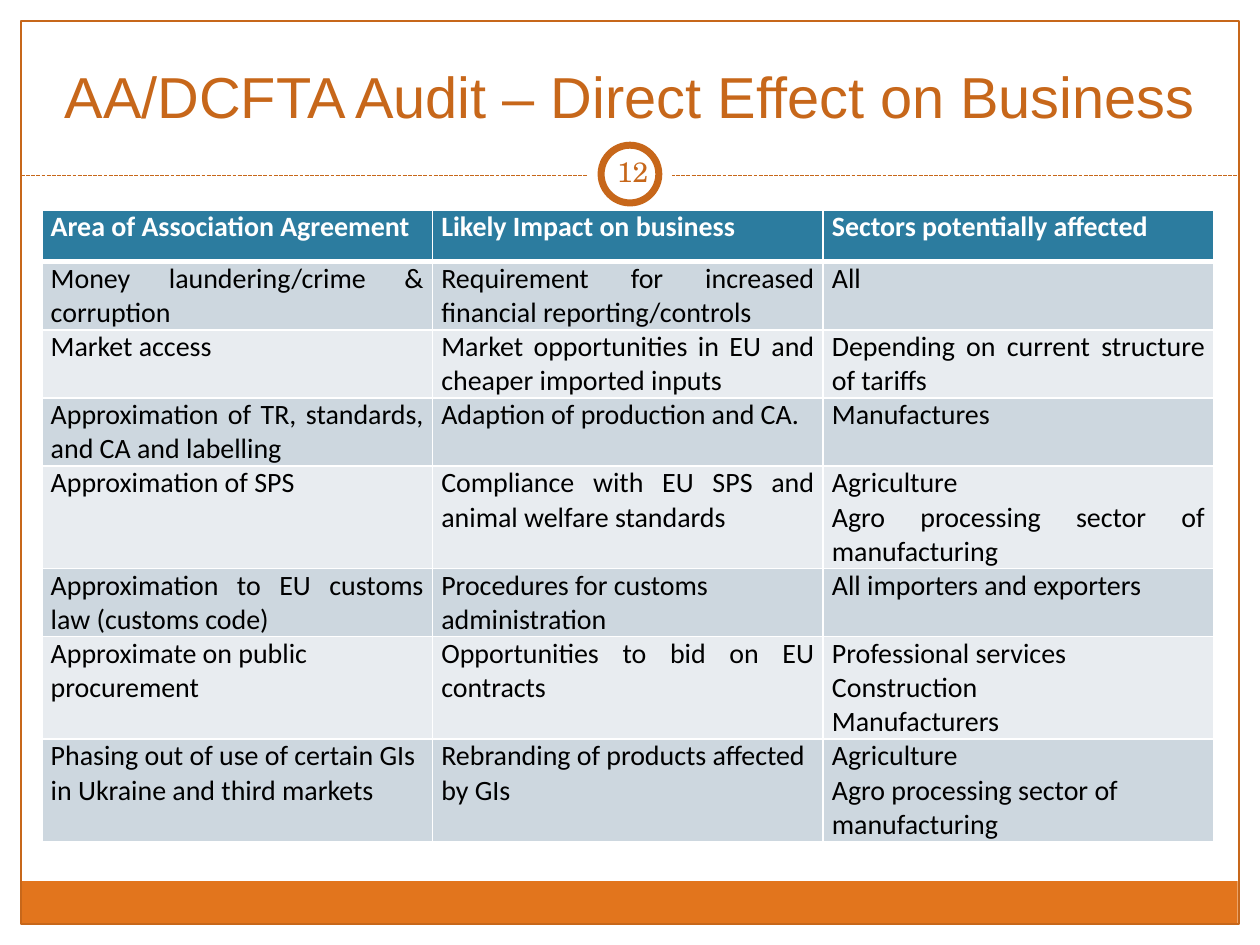
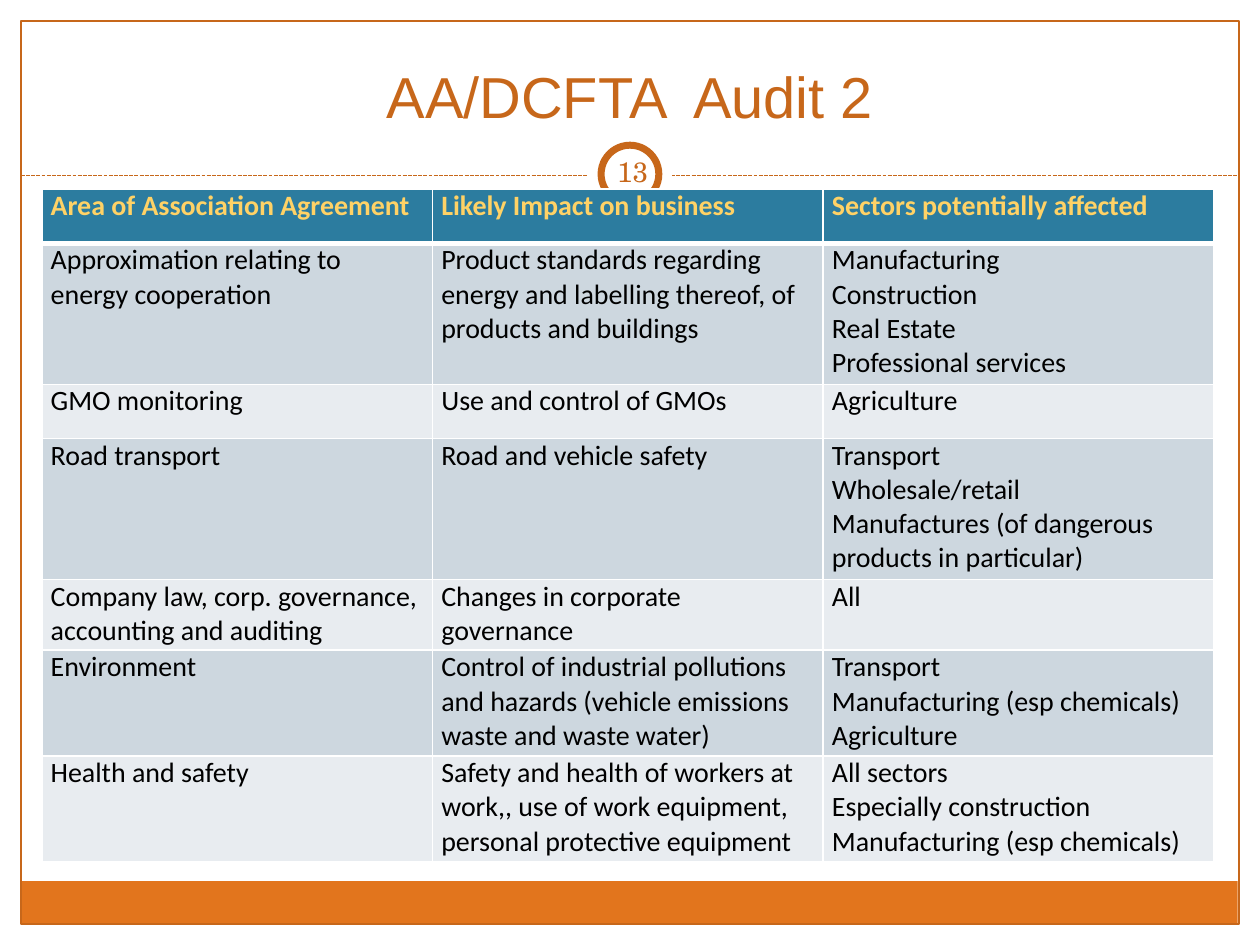
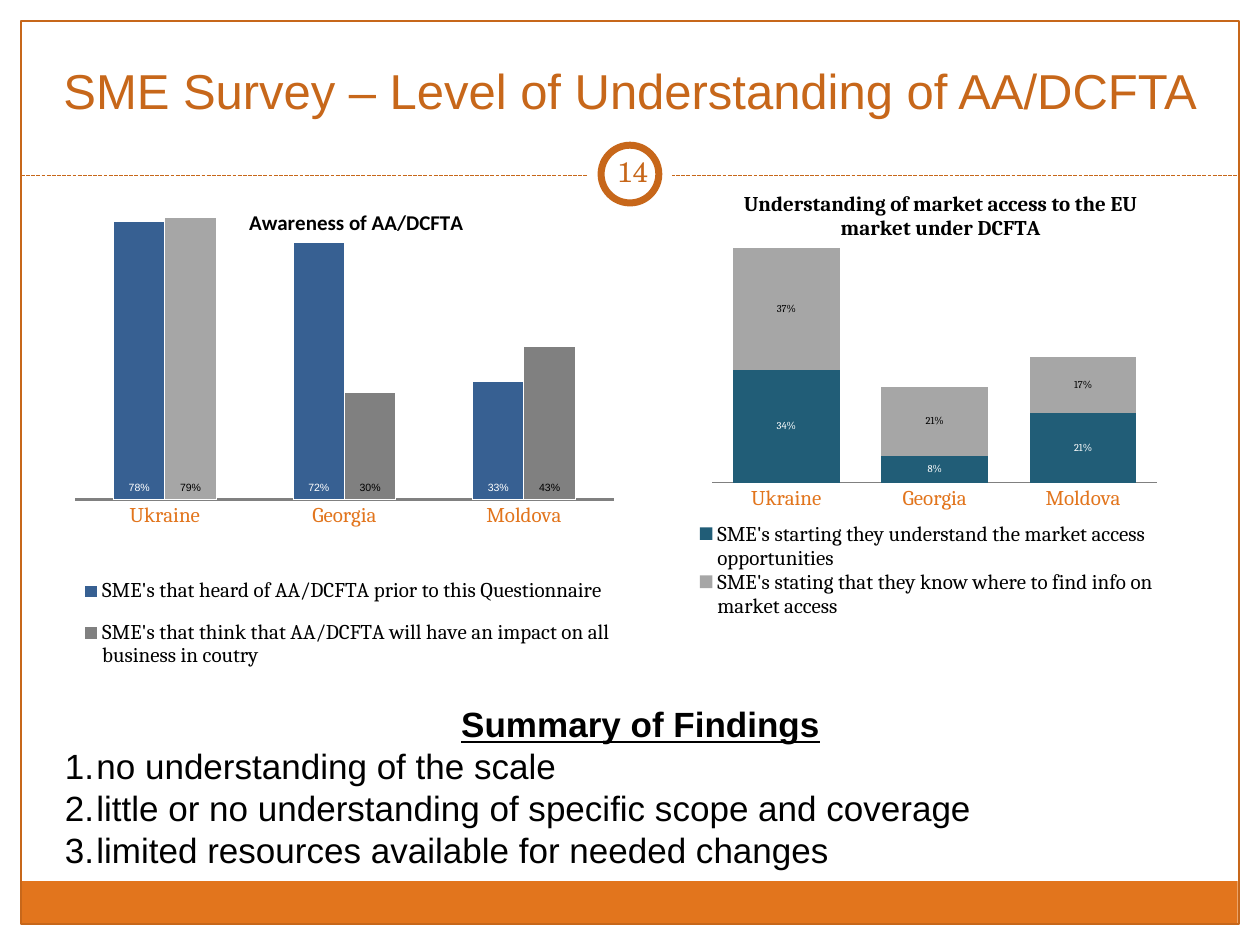
import pptx
import pptx.chart.data
import pptx.dml.color
import pptx.enum.chart
import pptx.enum.dml
import pptx.enum.shapes
import pptx.enum.text
import pptx.oxml.ns
import pptx.util
from lxml import etree

Pt = pptx.util.Pt
RGBColor = pptx.dml.color.RGBColor
SHAPE = pptx.enum.shapes.MSO_SHAPE
ALIGN = pptx.enum.text.PP_ALIGN
ANCHOR = pptx.enum.text.MSO_ANCHOR
CHART = pptx.enum.chart.XL_CHART_TYPE
qn = pptx.oxml.ns.qn

WHITE = RGBColor(0xFF, 0xFF, 0xFF)
BLACK = RGBColor(0, 0, 0)
ORANGE = RGBColor(0xE2, 0x75, 0x1D)
RUST = RGBColor(0xC7, 0x67, 0x1A)
TEAL = RGBColor(0x2C, 0x7C, 0x9F)
YELLOW = RGBColor(0xFF, 0xD2, 0x66)
BAND_DARK = RGBColor(0xCD, 0xD7, 0xDF)
BAND_LIGHT = RGBColor(0xE8, 0xEC, 0xF0)
BAR_BLUE = RGBColor(0x37, 0x60, 0x92)
BAR_TEAL = RGBColor(0x21, 0x5D, 0x77)
BAR_GREY = RGBColor(0x80, 0x80, 0x80)
BAR_SILVER = RGBColor(0xA6, 0xA6, 0xA6)

COUNTRIES = ["Ukraine", "Georgia", "Moldova"]
HEADINGS = ("Area of Association Agreement", "Likely Impact on business",
            "Sectors potentially affected")
EFFECT_ROWS = [
    (2, "Money laundering/crime & corruption",
     "Requirement for increased financial reporting/controls", "All"),
    (2, "Market access", "Market opportunities in EU and cheaper imported inputs",
     "Depending on current structure of tariffs"),
    (2, "Approximation of TR, standards, and CA and labelling",
     "Adaption of production and CA.", "Manufactures"),
    (3, "Approximation of SPS", "Compliance with EU SPS and animal welfare standards",
     "Agriculture\nAgro processing sector of manufacturing"),
    (2, "Approximation to EU customs law (customs code)",
     "Procedures for customs administration", "All importers and exporters"),
    (3, "Approximate on public procurement", "Opportunities to bid on EU contracts",
     "Professional services\nConstruction\nManufacturers"),
    (3, "Phasing out of use of certain GIs in Ukraine and third markets",
     "Rebranding of products affected by GIs",
     "Agriculture\nAgro processing sector of manufacturing"),
]
EFFECT_LEFT_ALIGNED = {(5, 1), (6, 0), (7, 0), (7, 1), (7, 2)}
AUDIT_ROWS = [
    (4, "Approximation relating to energy cooperation",
     "Product standards regarding energy and labelling thereof, of products and buildings",
     "Manufacturing\nConstruction\nReal Estate\nProfessional services"),
    (1, "GMO monitoring", "Use and control of GMOs", "Agriculture"),
    (4, "Road transport", "Road and vehicle safety",
     "Transport\nWholesale/retail\nManufactures (of dangerous products in particular)"),
    (2, "Company law, corp. governance, accounting and auditing",
     "Changes in corporate governance", "All"),
    (3, "Environment",
     "Control of industrial pollutions and hazards (vehicle emissions waste and waste water)",
     "Transport\nManufacturing (esp chemicals)\nAgriculture"),
    (3, "Health and safety",
     "Safety and health of workers at work,, use of work equipment, "
     "personal protective equipment",
     "All sectors\nEspecially construction\nManufacturing (esp chemicals)"),
]
AUDIT_LEFT_ALIGNED = {(row, column) for row in range(1, 7) for column in range(3)}
FINDINGS = ["no understanding of the scale",
            "little or no understanding of specific scope and coverage",
            "limited resources available for needed changes"]


def set_font(font, name, size, color, bold=False):
    font.name, font.size, font.bold = name, Pt(size), bold
    font.color.rgb = color


def add_shape(page, kind, left, top, width, height, fill=None, line_width=None):
    shape = page.shapes.add_shape(kind, Pt(left), Pt(top), Pt(width), Pt(height))
    shape.shadow.inherit = False
    if fill is None:
        shape.fill.background()
    else:
        shape.fill.solid()
        shape.fill.fore_color.rgb = fill
    if line_width is None:
        shape.line.fill.background()
    else:
        shape.line.color.rgb = RUST
        shape.line.width = Pt(line_width)


def add_text(page, text, left, top, width, height, font, size, color,
             anchor=ANCHOR.TOP, margin=None):
    box = page.shapes.add_textbox(Pt(left), Pt(top), Pt(width), Pt(height))
    frame = box.text_frame
    frame.word_wrap = True
    frame.vertical_anchor = anchor
    if margin is not None:
        frame.margin_left = frame.margin_right = Pt(margin)
    frame.text = text
    for para in frame.paragraphs:
        para.alignment = ALIGN.CENTER
        set_font(para.font, font, size, color)
    return frame


def add_divider(page):
    line = page.shapes.add_connector(
        pptx.enum.shapes.MSO_CONNECTOR.STRAIGHT, Pt(12), Pt(100.5), Pt(708), Pt(100.5))
    line.line.color.rgb = RUST
    line.line.width = Pt(0.75)
    line.line.dash_style = pptx.enum.dml.MSO_LINE.SQUARE_DOT
    etree.SubElement(line._element.spPr, qn("a:effectLst"))


def add_page(deck, title, title_size=33, title_top=18, title_height=60):
    page = deck.slides.add_slide(deck.slide_layouts[6])
    add_shape(page, SHAPE.RECTANGLE, 11.75, 503.5, 695.5, 24.5, fill=ORANGE)
    add_shape(page, SHAPE.RECTANGLE, 12, 12, 696, 516, line_width=0.75)
    add_divider(page)
    add_shape(page, SHAPE.OVAL, 336, 75.5, 48, 48, fill=WHITE)
    add_shape(page, SHAPE.OVAL, 343.5, 83, 33, 33, fill=WHITE, line_width=4)
    add_text(page, title, 24, title_top, 672, title_height, "Arial", title_size, RUST,
             anchor=ANCHOR.BOTTOM)
    return page


def add_number(page, number):
    add_text(page, str(number), 343.5, 80.5, 36, 34.5, "TeX Gyre Schola", 16, RUST,
             anchor=ANCHOR.MIDDLE, margin=3.6)


def add_borders(cell, top, bottom):
    properties = cell._tc.get_or_add_tcPr()
    for side, width in (("L", 1), ("R", 1), ("T", top), ("B", bottom)):
        line = etree.SubElement(properties, qn("a:ln" + side), w=str(Pt(width)))
        fill = etree.SubElement(line, qn("a:solidFill"))
        etree.SubElement(fill, qn("a:srgbClr"), val=str(WHITE))


def fill_cell(cell, text, row, heading_color, alignment):
    add_borders(cell, 3 if row == 1 else 1, 3 if row == 0 else 1)
    cell.fill.solid()
    cell.fill.fore_color.rgb = (
        TEAL if row == 0 else BAND_DARK if row % 2 else BAND_LIGHT)
    cell.margin_left = cell.margin_right = Pt(5)
    cell.margin_top = cell.margin_bottom = 0
    cell.text_frame.text = text
    for para in cell.text_frame.paragraphs:
        para.alignment = alignment
        set_font(para.font, "Calibri", 16, BLACK if row else heading_color, row == 0)


def add_impact_table(page, top, body_rows, heading_height, line_height,
                     heading_color, left_aligned):
    rows = [(1, *HEADINGS)] + body_rows
    heights = [max(heading_height, row[0] * line_height) for row in rows]
    table = page.shapes.add_table(len(rows), 3, Pt(24), Pt(top), Pt(669.6),
                                  Pt(sum(heights))).table
    for column in table.columns:
        column.width = Pt(223.2)
    for row, (_, *texts) in enumerate(rows):
        table.rows[row].height = Pt(heights[row])
        for column, text in enumerate(texts):
            alignment = ALIGN.LEFT if (row, column) in left_aligned else ALIGN.JUSTIFY
            fill_cell(table.cell(row, column), text, row, heading_color, alignment)


def place(element, x, y, width=None, height=None, inner=False):
    for old in element.findall(qn("c:layout")):
        element.remove(old)
    layout = etree.Element(qn("c:layout"))
    manual = etree.SubElement(layout, qn("c:manualLayout"))
    if inner:
        etree.SubElement(manual, qn("c:layoutTarget"), val="inner")
    for mode in ("xMode", "yMode"):
        etree.SubElement(manual, qn("c:" + mode), val="edge")
    for name, value in (("x", x), ("y", y), ("w", width), ("h", height)):
        if value is not None:
            etree.SubElement(manual, qn("c:" + name), val=str(value))
    leaders = (qn("c:tx"), qn("c:legendPos"))
    position = sum(child.tag in leaders for child in element)
    element.insert(position, layout)


def style_axes(chart, maximum, line_width):
    category = chart.category_axis
    category.major_tick_mark = pptx.enum.chart.XL_TICK_MARK.NONE
    category.format.line.color.rgb = BAR_GREY
    category.format.line.width = Pt(line_width)
    set_font(category.tick_labels.font, "Cambria", 12, ORANGE)
    value = chart.value_axis
    value.visible = False
    value.has_major_gridlines = False
    value.minimum_scale, value.maximum_scale = 0, maximum


def add_survey_chart(page, kind, bounds, title, title_font, series, maximum, gap, overlap,
                     axis_width, title_place, legend_place, plot_place):
    data = pptx.chart.data.CategoryChartData(number_format="0%")
    data.categories = COUNTRIES
    for name, values, *_ in series:
        data.add_series(name, values)
    chart = page.shapes.add_chart(kind, *map(Pt, bounds), data).chart
    set_font(chart.font, title_font, 10, BLACK)
    chart.has_title = True
    chart.chart_title.text_frame.text = title
    set_font(chart.chart_title.text_frame.paragraphs[0].font, title_font, 12, BLACK, True)
    chart.has_legend = True
    chart.legend.position = pptx.enum.chart.XL_LEGEND_POSITION.BOTTOM
    chart.legend.include_in_layout = False
    set_font(chart.legend.font, "Cambria", 12, BLACK)
    style_axes(chart, maximum, axis_width)
    plot = chart.plots[0]
    plot.gap_width, plot.overlap, plot.vary_by_categories = gap, overlap, False
    for bars, (_, _, color, label_color, label_font) in zip(plot.series, series):
        bars.format.fill.solid()
        bars.format.fill.fore_color.rgb = color
        labels = bars.data_labels
        labels.show_value = True
        labels.number_format, labels.number_format_is_linked = "0%", False
        set_font(labels.font, label_font, 6, label_color)
    place(chart.chart_title._element, *title_place)
    place(chart.legend._element, *legend_place)
    place(chart._chartSpace.chart.plotArea, *plot_place, inner=True)
    return plot


def add_awareness_chart(page):
    plot = add_survey_chart(
        page, CHART.COLUMN_CLUSTERED, (30, 102, 324, 296), "Awareness of AA/DCFTA", "Calibri",
        [("SME's that heard of AA/DCFTA prior to this Questionnaire",
          (0.78, 0.72, 0.33), BAR_BLUE, WHITE, "Arial"),
         ("SME's that think that AA/DCFTA will have an impact on all business in coutry",
          (0.79, 0.3, 0.43), BAR_GREY, BLACK, "Arial")],
        0.9, 150, 0, 1.5, (0.34, 0.05), (0.05, 0.74, 0.94, 0.24), (0.04, 0, 0.95, 0.62))
    for bars in plot.series:
        bars.format.line.color.rgb = WHITE
        bars.data_labels.position = pptx.enum.chart.XL_LABEL_POSITION.INSIDE_BASE
    ukraine = plot.series[1].points[0].format
    ukraine.fill.solid()
    ukraine.fill.fore_color.rgb = BAR_SILVER
    ukraine.line.color.rgb = WHITE


def add_understanding_chart(page):
    add_survey_chart(
        page, CHART.COLUMN_STACKED, (372, 102, 318, 252),
        "Understanding of market access to the EU market under DCFTA", "Cambria",
        [("SME's starting they understand the market access opportunities",
          (0.34, 0.08, 0.21), BAR_TEAL, WHITE, "Cambria"),
         ("SME's stating that they know where to find info on market access",
          (0.37, 0.21, 0.17), BAR_SILVER, BLACK, "Cambria")],
        0.8, 39, 100, 0.75, (0.16, 0.02), (0.07, 0.78, 0.85, 0.22), (0.11, 0.09, 0.8, 0.6))


def add_findings(page):
    frame = add_text(page, "\n".join(["Summary of Findings"] + FINDINGS),
                     30, 398, 672, 104.5, "Arial", 20, BLACK)
    heading, *items = frame.paragraphs
    heading.font.bold = heading.font.underline = True
    for para in items:
        para.alignment = ALIGN.LEFT
        properties = para._p.get_or_add_pPr()
        properties.set("marL", str(Pt(18)))
        properties.set("indent", str(Pt(-18)))
        bullet = etree.Element(qn("a:buAutoNum"), type="arabicPeriod")
        properties.insert(0, bullet)


def main():
    deck = pptx.Presentation()
    deck.slide_width, deck.slide_height = Pt(720), Pt(540)

    page = add_page(deck, "AA/DCFTA Audit – Direct Effect on Business")
    add_impact_table(page, 120, EFFECT_ROWS, 29.5, 19.5, WHITE, EFFECT_LEFT_ALIGNED)
    add_number(page, 12)

    page = add_page(deck, "AA/DCFTA  Audit 2")
    add_impact_table(page, 108, AUDIT_ROWS, 31, 20.16, YELLOW, AUDIT_LEFT_ALIGNED)
    add_number(page, 13)

    page = add_page(deck, "SME Survey – Level of Understanding of AA/DCFTA", 28, 24, 48)
    add_number(page, 14)
    add_findings(page)
    add_understanding_chart(page)
    add_awareness_chart(page)

    deck.save("out.pptx")


if __name__ == "__main__":
    main()
